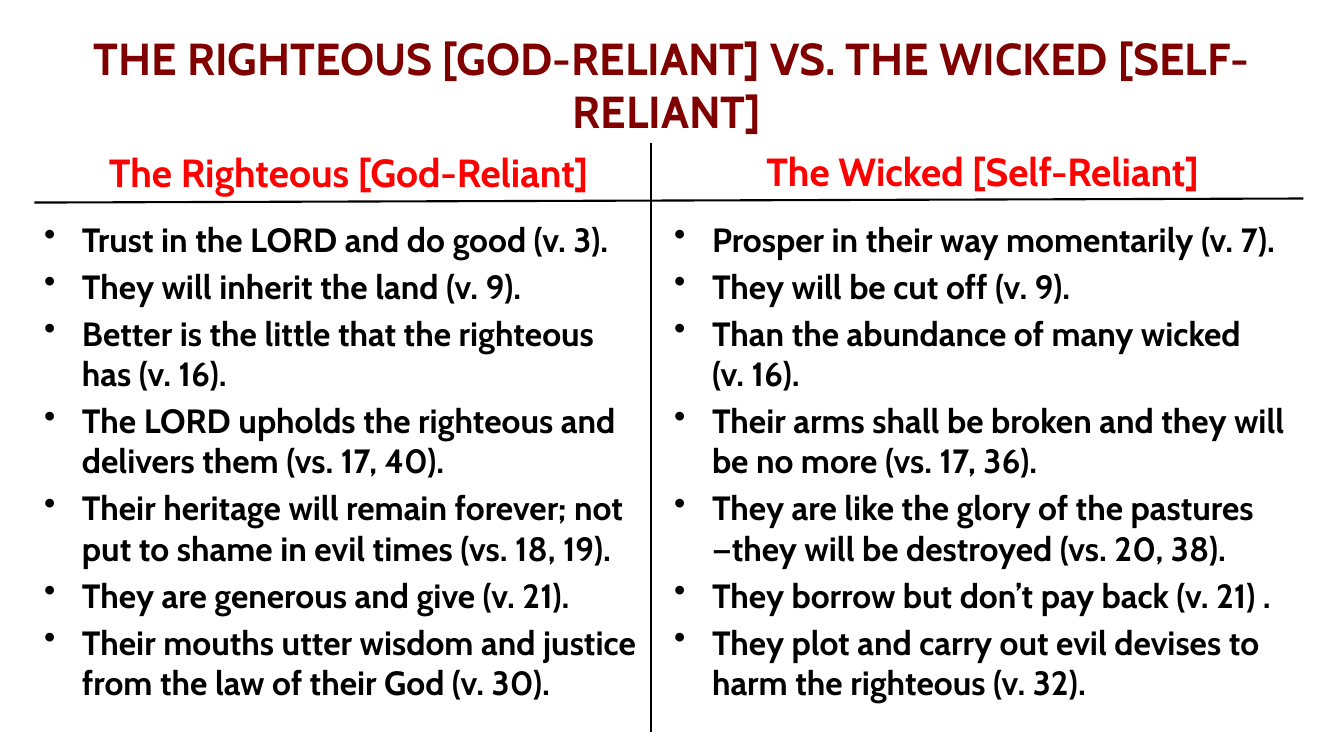
import dataclasses

import lxml.etree
import pptx
import pptx.dml.color
import pptx.enum.shapes
import pptx.enum.text
import pptx.oxml.ns
import pptx.shapes.autoshape
import pptx.slide
import pptx.util

Pt = pptx.util.Pt
RGBColor = pptx.dml.color.RGBColor
Align = pptx.enum.text.PP_ALIGN
Anchor = pptx.enum.text.MSO_ANCHOR

MAROON = RGBColor(0x80, 0x00, 0x00)
RED = RGBColor(0xFF, 0x00, 0x00)
BLACK = RGBColor(0x00, 0x00, 0x00)
FONT = "Cabin"
BULLET_INDENT = 27
SPACE_RATIO = 0.2


@dataclasses.dataclass(frozen=True)
class Frame:
    left: float
    top: float
    width: float
    height: float


@dataclasses.dataclass(frozen=True)
class Style:
    size: float
    color: RGBColor
    align: Align
    anchor: Anchor
    space_ratio: float = SPACE_RATIO
    bulleted: bool = False


@dataclasses.dataclass(frozen=True)
class Column:
    heading: str
    heading_frame: Frame
    points: tuple[str, ...]
    points_frame: Frame


@dataclasses.dataclass(frozen=True)
class Rule:
    start_x: float
    start_y: float
    end_x: float
    end_y: float


TITLE_STYLE = Style(32, MAROON, Align.CENTER, Anchor.MIDDLE, space_ratio=0)
HEADING_STYLE = Style(28, RED, Align.CENTER, Anchor.MIDDLE)
POINT_STYLE = Style(24, BLACK, Align.LEFT, Anchor.TOP, bulleted=True)

TITLE = "THE RIGHTEOUS [GOD-RELIANT] VS. THE WICKED [SELF-RELIANT] "
TITLE_FRAME = Frame(0, 42, 960, 36)

COLUMNS = (
    Column(
        "The Righteous [God-Reliant] ",
        Frame(30, 102, 444, 42),
        (
            "Trust in the LORD and do good (v. 3).",
            "They will inherit the land (v. 9).",
            "Better is the little that the righteous has (v. 16).",
            "The LORD upholds the righteous and delivers them (vs. 17, 40).",
            "Their heritage will remain forever; not put to shame in evil times (vs. 18, 19).",
            "They are generous and give (v. 21).",
            "Their mouths utter wisdom and justice from the law of their God (v. 30).",
        ),
        Frame(24.5, 152.5, 443.5, 386),
    ),
    Column(
        "The Wicked [Self-Reliant] ",
        Frame(474, 102, 462, 39.6),
        (
            "Prosper in their way momentarily (v. 7).",
            "They will be cut off (v. 9).",
            "Than the abundance of many wicked\v(v. 16).",
            "Their arms shall be broken and they will be no more (vs. 17, 36).",
            "They are like the glory of the pastures\v—they will be destroyed (vs. 20, 38).",
            "They borrow but don’t pay back (v. 21) .",
            "They plot and carry out evil devises to harm the righteous (v. 32).",
        ),
        Frame(474.5, 152.5, 461.5, 386),
    ),
)

RULES = (
    Rule(24.5, 144.7, 931, 141.8),
    Rule(465.1, 102, 465.1, 522.7),
)


def add_bullet(para: pptx.text.text._Paragraph) -> None:
    properties = para._p.get_or_add_pPr()
    properties.set("marL", str(Pt(BULLET_INDENT)))
    properties.set("indent", str(-Pt(BULLET_INDENT)))
    bullet = lxml.etree.SubElement(properties, pptx.oxml.ns.qn("a:buChar"))
    bullet.set("char", "•")


def add_text(
    page: pptx.slide.Slide, frame: Frame, lines: tuple[str, ...], style: Style
) -> None:
    box = page.shapes.add_textbox(
        Pt(frame.left), Pt(frame.top), Pt(frame.width), Pt(frame.height)
    )
    text_frame = box.text_frame
    text_frame.word_wrap = True
    text_frame.vertical_anchor = style.anchor
    text_frame.text = "\n".join(lines)
    for para in text_frame.paragraphs:
        para.alignment = style.align
        para.space_before = Pt(style.size * style.space_ratio)
        if style.bulleted:
            add_bullet(para)
        for span in para.runs:
            span.font.name = FONT
            span.font.size = Pt(style.size)
            span.font.bold = True
            span.font.color.rgb = style.color


def add_rule(page: pptx.slide.Slide, rule: Rule) -> None:
    line = page.shapes.add_connector(
        pptx.enum.shapes.MSO_CONNECTOR.STRAIGHT,
        Pt(rule.start_x),
        Pt(rule.start_y),
        Pt(rule.end_x),
        Pt(rule.end_y),
    )
    line.line.color.rgb = BLACK
    line.line.width = Pt(1.5)
    lxml.etree.SubElement(line._element.spPr, pptx.oxml.ns.qn("a:effectLst"))


def main() -> None:
    deck = pptx.Presentation()
    deck.slide_width = Pt(960)
    deck.slide_height = Pt(540)
    page = deck.slides.add_slide(deck.slide_layouts[6])
    add_text(page, TITLE_FRAME, (TITLE,), TITLE_STYLE)
    for column in COLUMNS:
        add_text(page, column.heading_frame, (column.heading,), HEADING_STYLE)
        add_text(page, column.points_frame, column.points, POINT_STYLE)
    for rule in RULES:
        add_rule(page, rule)
    deck.save("out.pptx")


if __name__ == "__main__":
    main()
